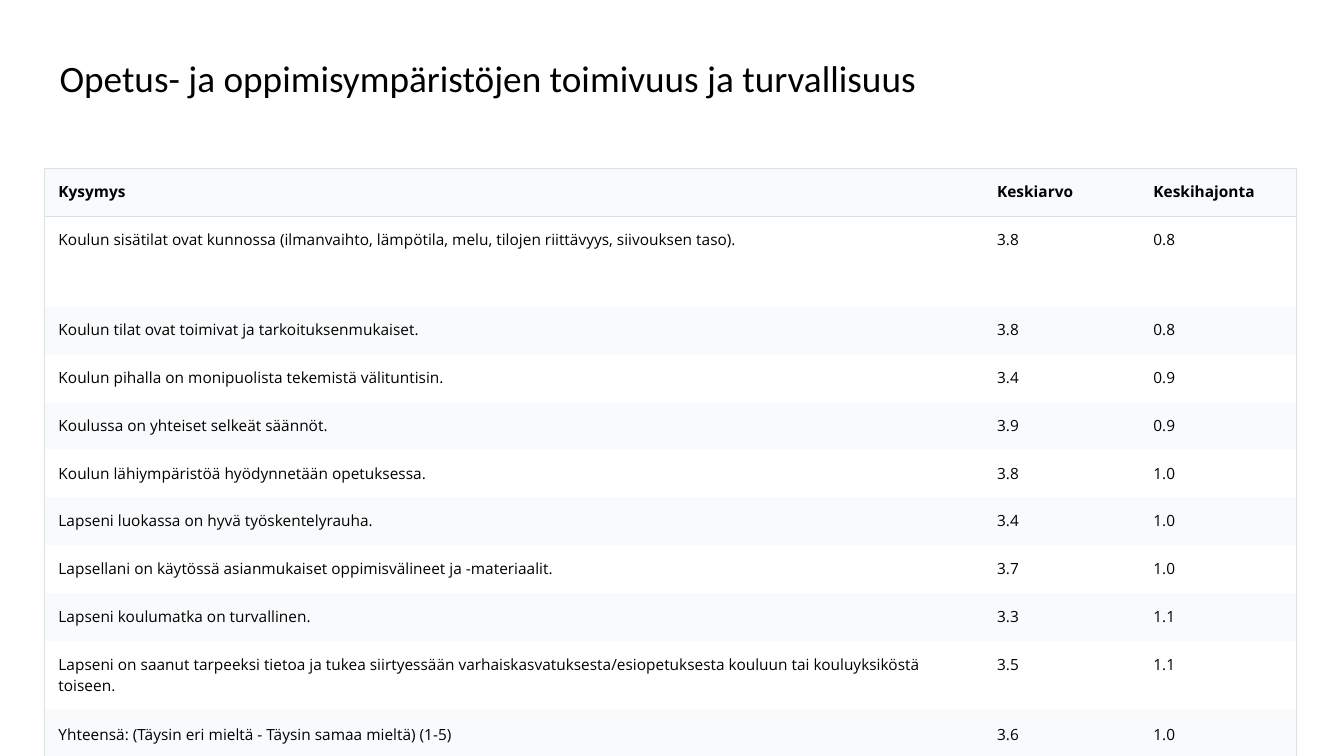
from typing import NamedTuple

from lxml import etree
from pptx import Presentation
from pptx.dml.color import RGBColor
from pptx.enum.text import MSO_ANCHOR
from pptx.oxml.ns import qn
from pptx.util import Inches, Pt

MIDDLE, TOP = MSO_ANCHOR.MIDDLE, MSO_ANCHOR.TOP
COLORS = {"text": "000000", "white": "FFFFFF", "band": "F9FAFB", "border": "DAE2E5"}
INSET_X, INSET_Y = Inches(0.14), Inches(0.13)
COLUMN_WIDTHS = (9.31, 1.55, 1.56)
ROW_HEIGHT = 0.475


class Row(NamedTuple):
    question: str
    mean: str
    deviation: str
    height: float = ROW_HEIGHT


ROWS = [
    Row("Kysymys", "Keskiarvo", "Keskihajonta"),
    Row("Koulun sisätilat ovat kunnossa (ilmanvaihto, lämpötila, melu, "
        "tilojen riittävyys, siivouksen taso).", "3.8", "0.8", 0.89),
    Row("Koulun tilat ovat toimivat ja tarkoituksenmukaiset.", "3.8", "0.8"),
    Row("Koulun pihalla on monipuolista tekemistä välituntisin.", "3.4", "0.9"),
    Row("Koulussa on yhteiset selkeät säännöt.", "3.9", "0.9"),
    Row("Koulun lähiympäristöä hyödynnetään opetuksessa.", "3.8", "1.0"),
    Row("Lapseni luokassa on hyvä työskentelyrauha.", "3.4", "1.0"),
    Row("Lapsellani on käytössä asianmukaiset oppimisvälineet ja -materiaalit.", "3.7", "1.0"),
    Row("Lapseni koulumatka on turvallinen.", "3.3", "1.1"),
    Row("Lapseni on saanut tarpeeksi tietoa ja tukea siirtyessään "
        "varhaiskasvatuksesta/esiopetuksesta kouluun tai kouluyksiköstä toiseen.",
        "3.5", "1.1", 0.69),
    Row("Yhteensä: (Täysin eri mieltä - Täysin samaa mieltä) (1-5)", "3.6", "1.0"),
]


def write(box, text: str, *, size: float, font: str, bold: bool = False,
          anchor=TOP, spacing: float | None = None) -> None:
    """Fill a text frame or a table cell with one formatted paragraph."""
    box.margin_left = box.margin_right = INSET_X
    box.margin_top = box.margin_bottom = INSET_Y
    box.vertical_anchor = anchor
    tf = getattr(box, "text_frame", box)
    tf.word_wrap = True
    p = tf.paragraphs[0]
    p.line_spacing = spacing
    r = p.add_run()
    r.text = text
    r.font.size, r.font.name, r.font.bold = Pt(size), font, bold
    r.font.color.rgb = RGBColor.from_string(COLORS["text"])


def set_borders(cell, visible: dict[str, bool]) -> None:
    """Draw the visible sides and switch off the others; call before the fill."""
    tc_pr = cell._tc.get_or_add_tcPr()
    for side in "LRTB":
        ln = etree.SubElement(tc_pr, qn(f"a:ln{side}"), w=str(Pt(1)))
        if visible[side]:
            fill = etree.SubElement(ln, qn("a:solidFill"))
            etree.SubElement(fill, qn("a:srgbClr"), val=COLORS["border"])
        else:
            etree.SubElement(ln, qn("a:noFill"))


def add_title(s, text: str) -> None:
    box = s.shapes.add_textbox(Inches(0.45), Inches(0.38), Inches(12.42), Inches(0.84))
    write(box.text_frame, text, size=26.6, font="Calibri", anchor=MIDDLE, spacing=0.9)


def add_results(s, rows: list[Row]) -> None:
    frame = s.shapes.add_table(
        len(rows), len(COLUMN_WIDTHS), Inches(0.44), Inches(1.67),
        Inches(sum(COLUMN_WIDTHS)), Inches(sum(row.height for row in rows)))
    table = frame.table
    table.first_row = table.horz_banding = False
    for column, width in zip(table.columns, COLUMN_WIDTHS):
        column.width = Inches(width)
    last_row, last_col = len(rows) - 1, len(COLUMN_WIDTHS) - 1
    for i, row in enumerate(rows):
        table.rows[i].height = Inches(row.height)
        for j, text in enumerate((row.question, row.mean, row.deviation)):
            cell = table.cell(i, j)
            write(cell, text, size=11, font="Open Sans", bold=i == 0)
            set_borders(cell, {"L": j == 0, "R": j == last_col,
                               "T": i <= 1, "B": i in (0, last_row)})
            cell.fill.solid()
            band = "white" if i % 2 else "band"
            cell.fill.fore_color.rgb = RGBColor.from_string(COLORS[band])


def main() -> None:
    prs = Presentation()
    prs.slide_width, prs.slide_height = Inches(13.33), Inches(7.5)
    s = prs.slides.add_slide(prs.slide_layouts[6])
    add_title(s, "Opetus- ja oppimisympäristöjen toimivuus ja turvallisuus")
    add_results(s, ROWS)
    prs.save("out.pptx")


if __name__ == "__main__":
    main()
